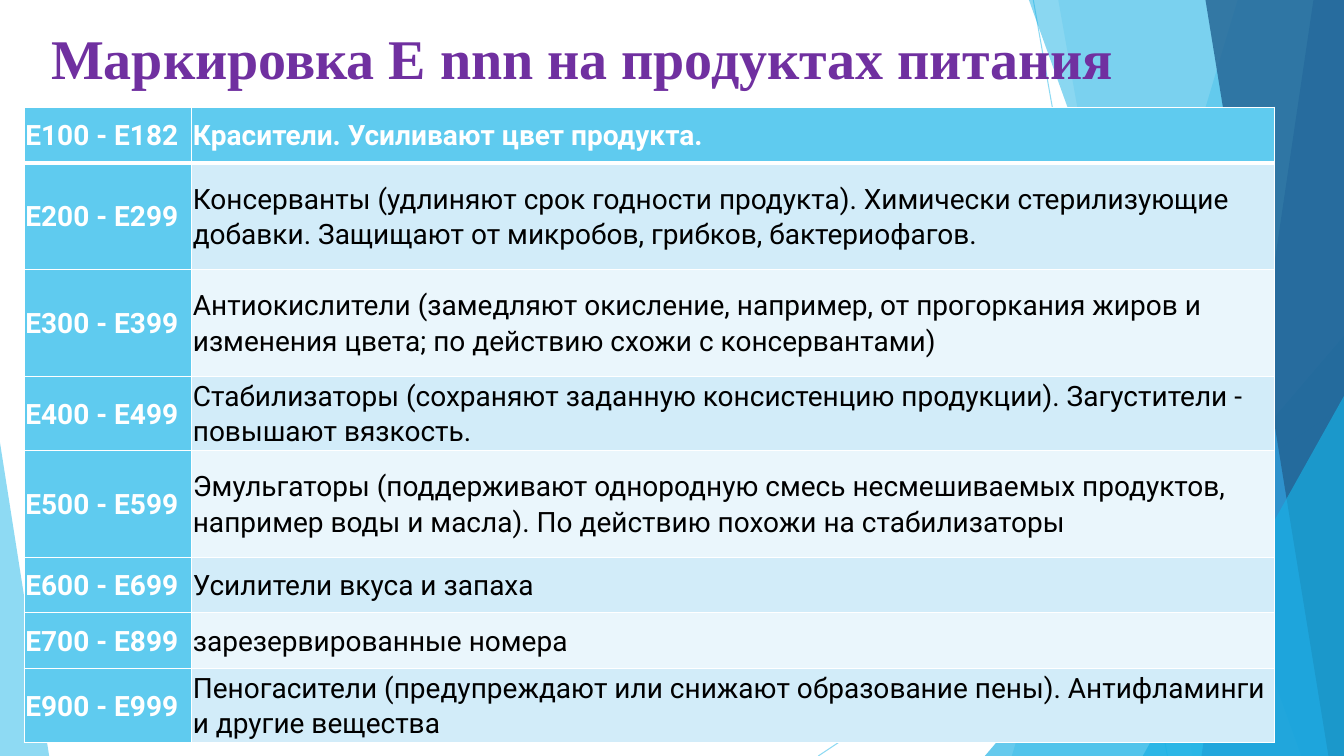
from lxml.etree import SubElement
from pptx import Presentation
from pptx.dml.color import RGBColor
from pptx.enum.shapes import MSO_CONNECTOR as Connector, MSO_SHAPE as Shape
from pptx.enum.text import MSO_ANCHOR as Anchor, MSO_AUTO_SIZE as AutoSize
from pptx.oxml.ns import qn
from pptx.util import Cm, Pt

WHITE = RGBColor(0xFF, 0xFF, 0xFF)
BLACK = RGBColor(0x00, 0x00, 0x00)
PURPLE = RGBColor(0x70, 0x30, 0xA0)
SKY = RGBColor(0x5F, 0xCB, 0xEF)
AZURE = RGBColor(0x17, 0xB0, 0xE4)
BLUE = RGBColor(0x2E, 0x83, 0xC3)
NAVY = RGBColor(0x22, 0x62, 0x92)
PALE = RGBColor(0xD2, 0xEC, 0xF9)
PALEST = RGBColor(0xEA, 0xF6, 0xFC)
WIDTH, HEIGHT = 33.87, 19.05


def write(frame, text, font="Roboto", size=20, color=BLACK, bold=False, spacing=None):
    para = frame.paragraphs[0]
    para.line_spacing = spacing
    span = para.add_run()
    span.text = text
    span.font.name = font
    span.font.size = Pt(size)
    span.font.color.rgb = color
    span.font.bold = bold


def set_opacity(fill_parent, percent):
    color = fill_parent.find(".//" + qn("a:srgbClr"))
    SubElement(color, qn("a:alpha"), val=str(percent * 1000))


deck = Presentation()
deck.slide_width, deck.slide_height = Cm(WIDTH), Cm(HEIGHT)
page = deck.slides.add_slide(deck.slide_layouts[6])
shapes = page.shapes

for x1, y1, x2, y2 in [(26.04, 0, 29.42, HEIGHT), (WIDTH, 10.23, 20.62, HEIGHT)]:
    ray = shapes.add_connector(Connector.STRAIGHT, Cm(x1), Cm(y1), Cm(x2), Cm(y2))
    ray.line.color.rgb = SKY
    ray.line.width = Pt(0.75)
    properties = ray._element.spPr
    set_opacity(properties, 70)
    SubElement(properties, qn("a:effectLst"))

facets = [
    ("band", (31.19, 25.5), SKY, 36),
    ("band", (26.67, 30.05), SKY, 20),
    ("triangle", (24.82, 8.46, 9.05, 1), AZURE, 66),
    ("band", (25.93, 32.79), AZURE, 50),
    ("band", (33.1, 30.28), BLUE, 70),
    ("band", (30.38, 33.48), NAVY, 80),
    ("triangle", (28.8, 9.98, 5.07, 1), AZURE, 66),
    ("triangle", (0, 11.15, 1.24, 0), SKY, 70),
]
for kind, place, color, opacity in facets:
    if kind == "band":
        top_x, bottom_x = place
        outline = shapes.build_freeform(Cm(top_x), Cm(0))
        corners = [(WIDTH, 0), (WIDTH, HEIGHT), (bottom_x, HEIGHT)]
        outline.add_line_segments([(Cm(x), Cm(y)) for x, y in corners], close=True)
        facet = outline.convert_to_shape()
    else:
        left, top, width, apex = place
        facet = shapes.add_shape(
            Shape.ISOSCELES_TRIANGLE, Cm(left), Cm(top), Cm(width), Cm(HEIGHT - top)
        )
        facet.adjustments[0] = apex
    facet.shadow.inherit = False
    facet.line.fill.background()
    facet.fill.solid()
    facet.fill.fore_color.rgb = color
    set_opacity(facet._element.spPr, opacity)

title = shapes.add_textbox(Cm(1.04), Cm(0.48), Cm(27.53), Cm(1.96)).text_frame
title.word_wrap = False
title.auto_size = AutoSize.SHAPE_TO_FIT_TEXT
write(title, "Маркировка E nnn на продуктах питания",
      font="Times New Roman", size=40, color=PURPLE, bold=True)

additives = [
    ("Е100 - Е182", "Красители. Усиливают цвет продукта.", 1.4),
    ("Е200 - Е299", "Консерванты (удлиняют срок годности продукта). Химически "
     "стерилизующие добавки. Защищают от микробов, грибков, бактериофагов.", 2.69),
    ("Е300 - Е399", "Антиокислители (замедляют окисление, например, от прогоркания "
     "жиров и изменения цвета; по действию схожи с консервантами)", 2.69),
    ("Е400 - Е499", "Стабилизаторы (сохраняют заданную консистенцию продукции). "
     "Загустители - повышают вязкость.", 1.85),
    ("Е500 - Е599", "Эмульгаторы (поддерживают однородную смесь несмешиваемых "
     "продуктов, например воды и масла). По действию похожи на стабилизаторы", 2.69),
    ("Е600 - Е699", "Усилители вкуса и запаха", 1.4),
    ("Е700 - Е899", "зарезервированные номера", 1.4),
    ("E900 - E999", "Пеногасители (предупреждают или снижают образование пены). "
     "Антифламинги и другие вещества", 1.85),
]
table_height = sum(height for _, _, height in additives)
table = shapes.add_table(
    len(additives), 2, Cm(0.61), Cm(2.7), Cm(31.5), Cm(table_height)
).table
table.columns[0].width, table.columns[1].width = Cm(4.22), Cm(27.28)

for row, (codes, purpose, height) in enumerate(additives):
    table.rows[row].height = Cm(height)
    for column, text in enumerate((codes, purpose)):
        cell = table.cell(row, column)
        heading = row == 0 or column == 0
        cell.vertical_anchor = Anchor.MIDDLE
        cell.margin_left = cell.margin_right = Cm(0.03)
        cell.margin_top = cell.margin_bottom = Cm(0.03)
        for side in "LRTB":
            under_header = (row, side) in [(0, "B"), (1, "T")]
            border = SubElement(cell._tc.get_or_add_tcPr(), qn("a:ln" + side),
                                w=str(Pt(3 if under_header else 1)))
            paint = SubElement(border, qn("a:solidFill"))
            SubElement(paint, qn("a:srgbClr"), val=str(WHITE))
        cell.fill.solid()
        cell.fill.fore_color.rgb = SKY if heading else PALE if row % 2 else PALEST
        write(cell.text_frame, text, color=WHITE if heading else BLACK,
              bold=heading, spacing=1.07)

deck.save("out.pptx")
